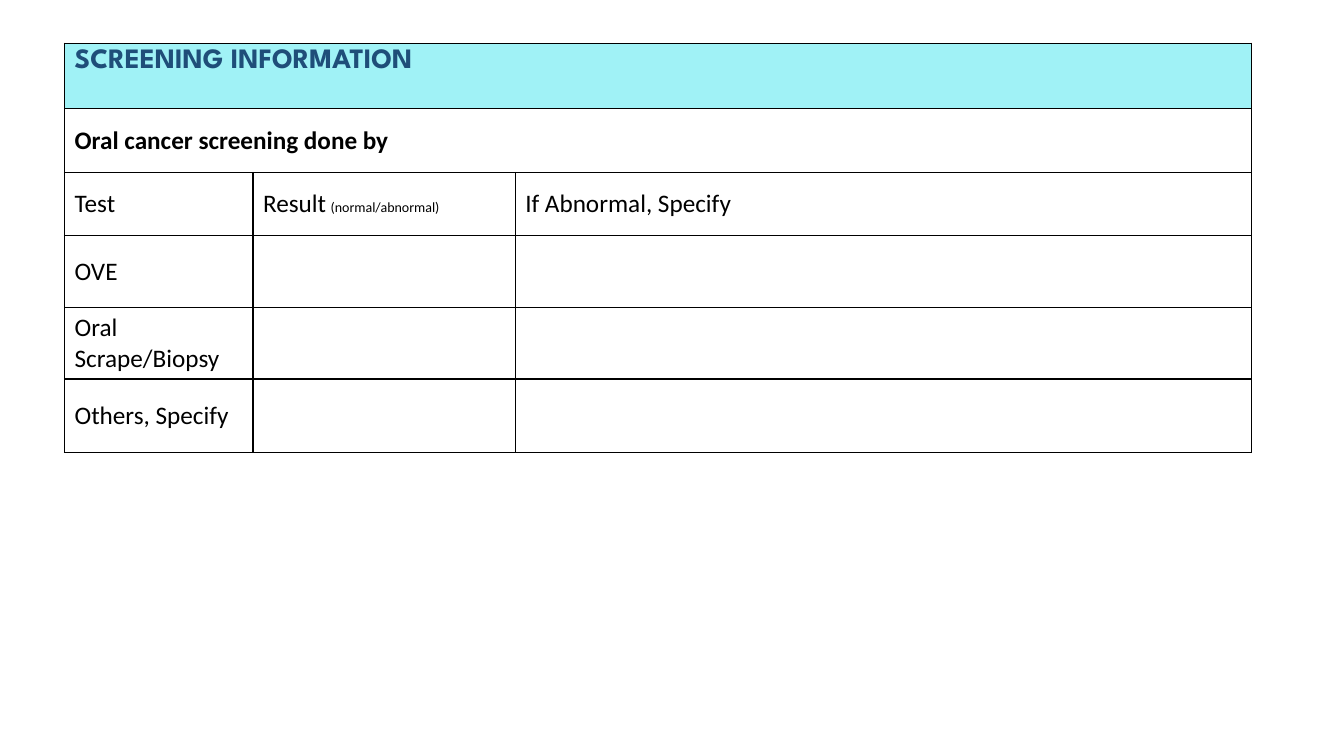
from dataclasses import dataclass

from lxml import etree
from pptx import Presentation
from pptx import util as u
from pptx.dml.color import RGBColor
from pptx.enum import text
from pptx.oxml import ns


@dataclass(frozen=True)
class Theme:
    ink: str = "000000"
    heading: str = "1F4E79"
    band: str = "A0F2F6"
    body_font: str = "Calibri"
    heading_font: str = "League Spartan"
    heading_size: int = 20
    body_size: int = 18
    gap_size: int = 14
    note_size: int = 10
    border_width: int = 1


def add_span(para, words, *, font, size, color, bold=False):
    span = para.add_run()
    span.text = words
    span.font.name = font
    span.font.size = u.Pt(size)
    span.font.bold = bold
    span.font.color.rgb = RGBColor.from_string(color)


class FormSlide:
    def __init__(self, deck, theme):
        self.theme = theme
        self.page = deck.slides.add_slide(deck.slide_layouts[6])

    def table(self, left, top, widths, heights):
        frame = self.page.shapes.add_table(
            len(heights), len(widths), u.Inches(left), u.Inches(top),
            u.Inches(sum(widths)), u.Inches(sum(heights)))
        table = frame.table
        table.first_row = table.horz_banding = False
        for column, width in zip(table.columns, widths):
            column.width = u.Inches(width)
        for row, height in zip(table.rows, heights):
            row.height = u.Inches(height)
        for cell in table.iter_cells():
            self.border(cell)
            cell.fill.background()
            cell.vertical_anchor = text.MSO_ANCHOR.MIDDLE
        return table

    def border(self, cell):
        properties = cell._tc.get_or_add_tcPr()
        for side in ("a:lnL", "a:lnR", "a:lnT", "a:lnB"):
            line = etree.SubElement(properties, ns.qn(side),
                                    w=str(u.Pt(self.theme.border_width)))
            fill = etree.SubElement(line, ns.qn("a:solidFill"))
            etree.SubElement(fill, ns.qn("a:srgbClr"), val=self.theme.ink)

    def label(self, cell, words, **changes):
        style = dict(font=self.theme.body_font, size=self.theme.body_size,
                     color=self.theme.ink)
        add_span(cell.text_frame.paragraphs[0], words, **(style | changes))

    def banner(self, table, row, words, **changes):
        cell = table.cell(row, 0)
        cell.merge(table.cell(row, len(table.columns) - 1))
        self.label(cell, words, bold=True, **changes)
        return cell


def main():
    deck = Presentation()
    deck.slide_width, deck.slide_height = u.Inches(13.33), u.Inches(7.5)
    theme = Theme()
    form = FormSlide(deck, theme)
    screening = form.table(0.64, 0.43, [1.87, 2.6, 7.3],
                           [0.65, 0.63, 0.63, 0.71, 0.71, 0.73])

    heading = form.banner(screening, 0, "SCREENING INFORMATION",
                          font=theme.heading_font, size=theme.heading_size,
                          color=theme.heading)
    heading.vertical_anchor = text.MSO_ANCHOR.TOP
    heading.fill.solid()
    heading.fill.fore_color.rgb = RGBColor.from_string(theme.band)
    form.banner(screening, 1, "Oral cancer screening done by")

    tests = ["Test", "OVE", "Oral Scrape/Biopsy", "Others, Specify"]
    for row, test in enumerate(tests, start=2):
        form.label(screening.cell(row, 0), test)

    result = screening.cell(2, 1)
    form.label(result, "Result")
    form.label(result, " ", size=theme.gap_size)
    form.label(result, "(normal/abnormal)", size=theme.note_size)
    form.label(screening.cell(2, 2), "If Abnormal, Specify")

    deck.save("out.pptx")


if __name__ == "__main__":
    main()
